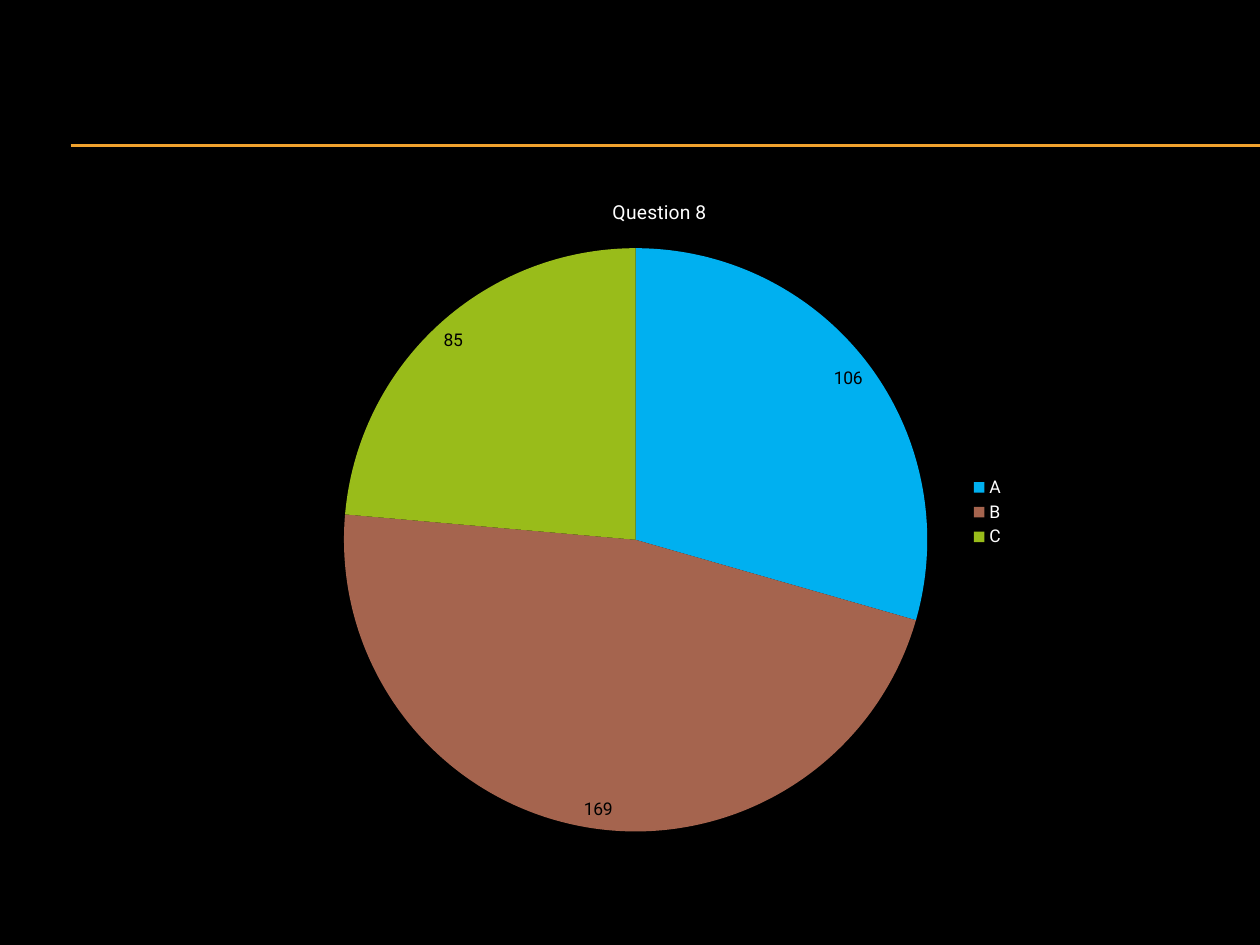
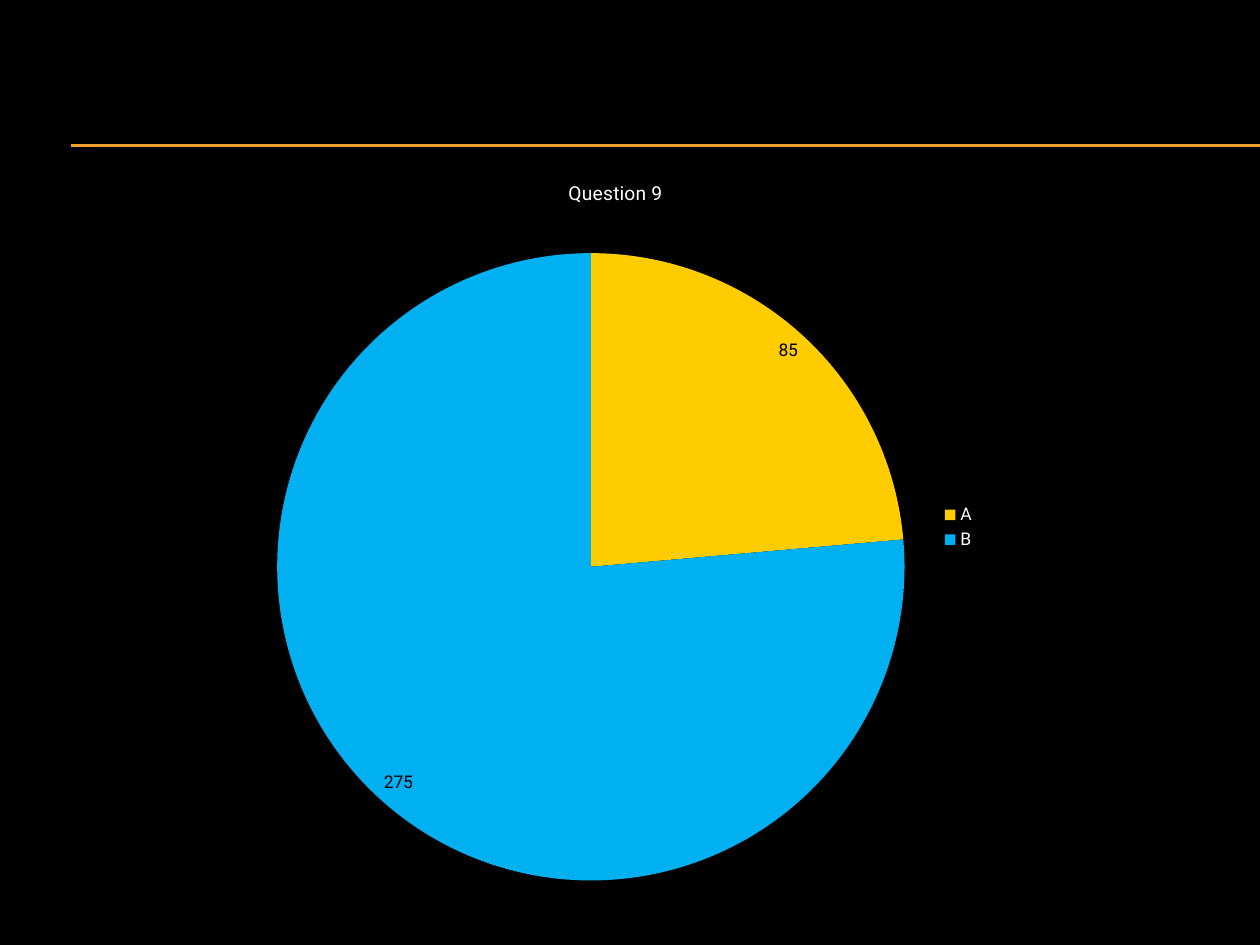
from lxml import etree
from pptx import Presentation
from pptx.chart.data import CategoryChartData
from pptx.dml.color import RGBColor
from pptx.enum.chart import XL_CHART_TYPE, XL_LABEL_POSITION, XL_LEGEND_POSITION
from pptx.enum.shapes import MSO_CONNECTOR
from pptx.oxml import parse_xml
from pptx.oxml.ns import nsdecls, qn
from pptx.util import Inches, Pt

PIE = XL_CHART_TYPE.PIE
INSIDE_END = XL_LABEL_POSITION.INSIDE_END
LEGEND_RIGHT = XL_LEGEND_POSITION.RIGHT
STRAIGHT = MSO_CONNECTOR.STRAIGHT

BLACK = RGBColor(0x00, 0x00, 0x00)
WHITE = RGBColor(0xFF, 0xFF, 0xFF)
ORANGE = RGBColor(0xF0, 0xA2, 0x2E)
BLUE = RGBColor(0x00, 0xB0, 0xF0)
BROWN = RGBColor(0xA5, 0x64, 0x4E)
GREEN = RGBColor(0x99, 0xBC, 0x1A)
YELLOW = RGBColor(0xFF, 0xCC, 0x00)

FONT = "Roboto"
BLANK_LAYOUT = 6
RULE_LEFT, RULE_TOPS = 0.56, (1.15, 1.16)
SLIDE_WIDTH, SLIDE_HEIGHT = 10, 7.5


def format_font(font, size=10, color=WHITE):
    font.name = FONT
    font.size = Pt(size)
    font.bold = False
    font.color.rgb = color


def write_text(frame, text, **font_format):
    span = frame.paragraphs[0].add_run()
    span.text = text
    format_font(span.font, **font_format)


def place_pie(chart, frame, pie):
    """Fix the circle in the chart frame; pie is left, top, diameter on the slide."""
    left, top, width, height = frame
    pie_left, pie_top, diameter = pie
    shares = {
        "x": (pie_left - left) / width,
        "y": (pie_top - top) / height,
        "w": diameter / width,
        "h": diameter / height,
    }
    plot_area = chart.plots[0]._element.getparent()
    for old_layout in plot_area.findall(qn("c:layout")):
        plot_area.remove(old_layout)
    layout = parse_xml(f"<c:layout {nsdecls('c')}><c:manualLayout/></c:layout>")
    settings = {"layoutTarget": "inner", "xMode": "edge", "yMode": "edge"}
    settings.update({name: f"{share:.4f}" for name, share in shares.items()})
    for name, value in settings.items():
        etree.SubElement(layout[0], qn(f"c:{name}")).set("val", value)
    plot_area.insert(0, layout)


class SurveyDeck:
    def __init__(self):
        self.deck = Presentation()
        self.deck.slide_width = Inches(SLIDE_WIDTH)
        self.deck.slide_height = Inches(SLIDE_HEIGHT)
        self.page = None

    def add_page(self):
        self.page = self.deck.slides.add_slide(self.deck.slide_layouts[BLANK_LAYOUT])
        background = self.page.background.fill
        background.solid()
        background.fore_color.rgb = BLACK
        for top in RULE_TOPS:
            self.add_rule(top)

    def add_rule(self, top):
        rule = self.page.shapes.add_connector(
            STRAIGHT, Inches(RULE_LEFT), Inches(top), Inches(SLIDE_WIDTH), Inches(top)
        )
        rule.line.color.rgb = ORANGE
        rule.line.width = Pt(0.75)
        etree.SubElement(rule._element.spPr, qn("a:effectLst"))

    def add_pie(self, title, series_name, answers, frame, pie):
        """Draw a pie; answers maps each category to its count and colour."""
        data = CategoryChartData(number_format="0")
        data.categories = list(answers)
        data.add_series(series_name, [count for count, _ in answers.values()])
        box = self.page.shapes.add_chart(PIE, *map(Inches, frame), data)
        chart = box.chart
        format_font(chart.font)

        chart.has_title = True
        write_text(chart.chart_title.text_frame, title, size=11)
        chart.has_legend = True
        chart.legend.position = LEGEND_RIGHT
        chart.legend.include_in_layout = False
        format_font(chart.legend.font)

        plot = chart.plots[0]
        plot.vary_by_categories = True
        plot.has_data_labels = True
        labels = plot.data_labels
        labels.show_value = True
        labels.show_percentage = False
        labels.number_format = "0"
        labels.number_format_is_linked = False
        labels.position = INSIDE_END
        format_font(labels.font, color=BLACK)

        for index, (_, color) in enumerate(answers.values()):
            slice_format = plot.series[0].points[index].format
            slice_format.fill.solid()
            slice_format.fill.fore_color.rgb = color
            slice_format.line.fill.background()
        place_pie(chart, frame, pie)


def main():
    survey = SurveyDeck()

    survey.add_page()
    survey.add_pie(
        "Question 8",
        "Question 8",
        {"A": (106, BLUE), "B": (169, BROWN), "C": (85, GREEN)},
        frame=(2.4, 1.39, 5.67, 5.35),
        pie=(2.73, 1.97, 4.63),
    )

    survey.add_page()
    survey.add_pie(
        "Question 9",
        "Series 1",
        {"A": (85, YELLOW), "B": (275, BLUE)},
        frame=(1.93, 1.23, 5.91, 5.91),
        pie=(2.2, 2.01, 4.98),
    )

    survey.deck.save("out.pptx")


if __name__ == "__main__":
    main()
